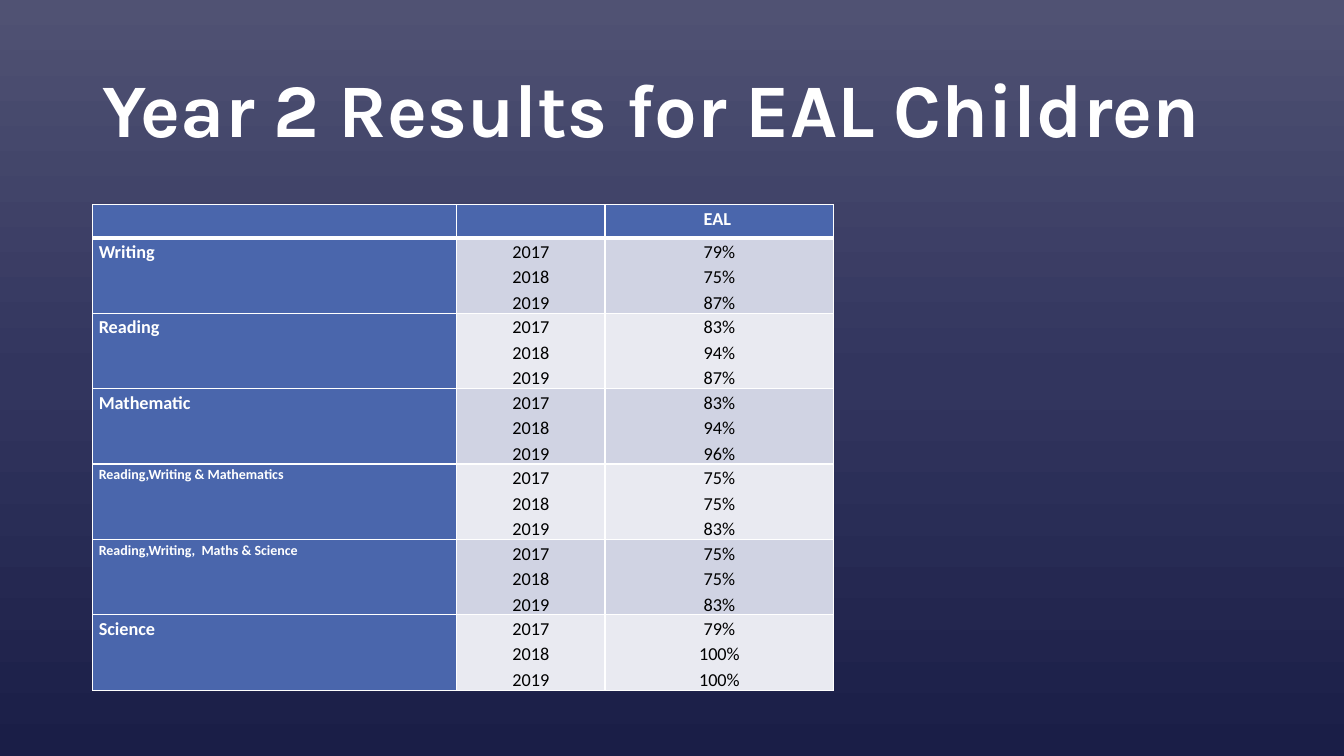
import pptx
import pptx.util
import pptx.dml.color
import pptx.enum.text
import pptx.oxml
import pptx.oxml.ns
from lxml import etree

Inches, Pt = pptx.util.Inches, pptx.util.Pt
RGB = pptx.dml.color.RGBColor.from_string
align = pptx.enum.text.PP_ALIGN
qn = pptx.oxml.ns.qn

theme = {
    "sky": [(0, "505273"), (50, "32355E"), (100, "1A1E47")],
    "white": "FFFFFF", "black": "000000", "blue": "4A66AC",
    "bands": ["D0D3E3", "E9EAF1"],
    "head": "Karla", "body": "Calibri",
    "title": 54, "text": 13, "small": 10,
}
years = ["2017", "2018", "2019"]
scores = [
    ("Writing", "text", ["79%", "75%", "87%"]),
    ("Reading", "text", ["83%", "94%", "87%"]),
    ("Mathematic", "text", ["83%", "94%", "96%"]),
    ("Reading,Writing & Mathematics", "small", ["75%", "75%", "83%"]),
    ("Reading,Writing,  Maths & Science", "small", ["75%", "75%", "83%"]),
    ("Science", "text", ["79%", "100%", "100%"]),
]


def add_run(para, text, face, size, color, bold):
    run = para.add_run()
    run.text = text
    run.font.name = theme[face]
    run.font.size = Pt(theme[size])
    run.font.bold = bold
    run.font.color.rgb = RGB(theme[color])


def fill_cell(cell, lines, fill, size, color, bold, side, top, base):
    cell.margin_left = cell.margin_right = Inches(0.06)
    cell.margin_top = cell.margin_bottom = 0
    props = cell._tc.get_or_add_tcPr()
    for tag, width in zip(["a:lnL", "a:lnR", "a:lnT", "a:lnB"], [1, 1, top, base]):
        line = etree.SubElement(props, qn(tag), w=str(Pt(width)))
        solid = etree.SubElement(line, qn("a:solidFill"))
        etree.SubElement(solid, qn("a:srgbClr"), val=theme["white"])
    cell.fill.solid()
    cell.fill.fore_color.rgb = RGB(fill)
    frame = cell.text_frame
    for i, text in enumerate(lines):
        para = frame.add_paragraph() if i else frame.paragraphs[0]
        para.alignment = side
        para.line_spacing = 1.15
        add_run(para, text, "body", size, color, bold)
    if not lines:
        etree.SubElement(frame.paragraphs[0]._p, qn("a:endParaRPr"),
                         sz=str(theme["text"] * 100))


deck = pptx.Presentation()
deck.slide_width, deck.slide_height = Inches(13.33), Inches(7.5)
slide = deck.slides.add_slide(deck.slide_layouts[6])

back = slide.background.fill
back.gradient()
back.gradient_angle = 270
stops = slide._element.find(".//" + qn("a:gsLst"))
for stop in list(stops):
    stops.remove(stop)
for place, color in theme["sky"]:
    stop = etree.SubElement(stops, qn("a:gs"), pos=str(place * 1000))
    etree.SubElement(stop, qn("a:srgbClr"), val=color)

title = slide.shapes.add_textbox(Inches(0.92), Inches(0.4), Inches(11.5), Inches(1.45))
frame = title.text_frame
frame.word_wrap = True
frame.vertical_anchor = pptx.enum.text.MSO_ANCHOR.MIDDLE
frame.paragraphs[0].line_spacing = 0.9
add_run(frame.paragraphs[0], "Year 2 Results for EAL Children", "head", "title", "white", True)

table = slide.shapes.add_table(len(scores) + 1, 3, Inches(0.92), Inches(2.03),
                               Inches(7.35), Inches(4.81)).table
for col, width in zip(table.columns, [3.61, 1.47, 2.27]):
    col.width = Inches(width)
for i, row in enumerate(table.rows):
    row.height = Inches(0.74 if i else 0.33)

for col, lines in enumerate([[], [], ["EAL "]]):
    fill_cell(table.cell(0, col), lines, theme["blue"], "text", "white", True,
              align.CENTER, 1, 3)
for row, (name, size, marks) in enumerate(scores, 1):
    top = 3 if row == 1 else 1
    fill_cell(table.cell(row, 0), [name], theme["blue"], size, "white", True,
              align.LEFT, top, 1)
    band = theme["bands"][(row - 1) % 2]
    for col, lines in enumerate([years, marks], 1):
        fill_cell(table.cell(row, col), lines, band, "text", "black", False,
                  align.CENTER, top, 1)

deck.save("out.pptx")
